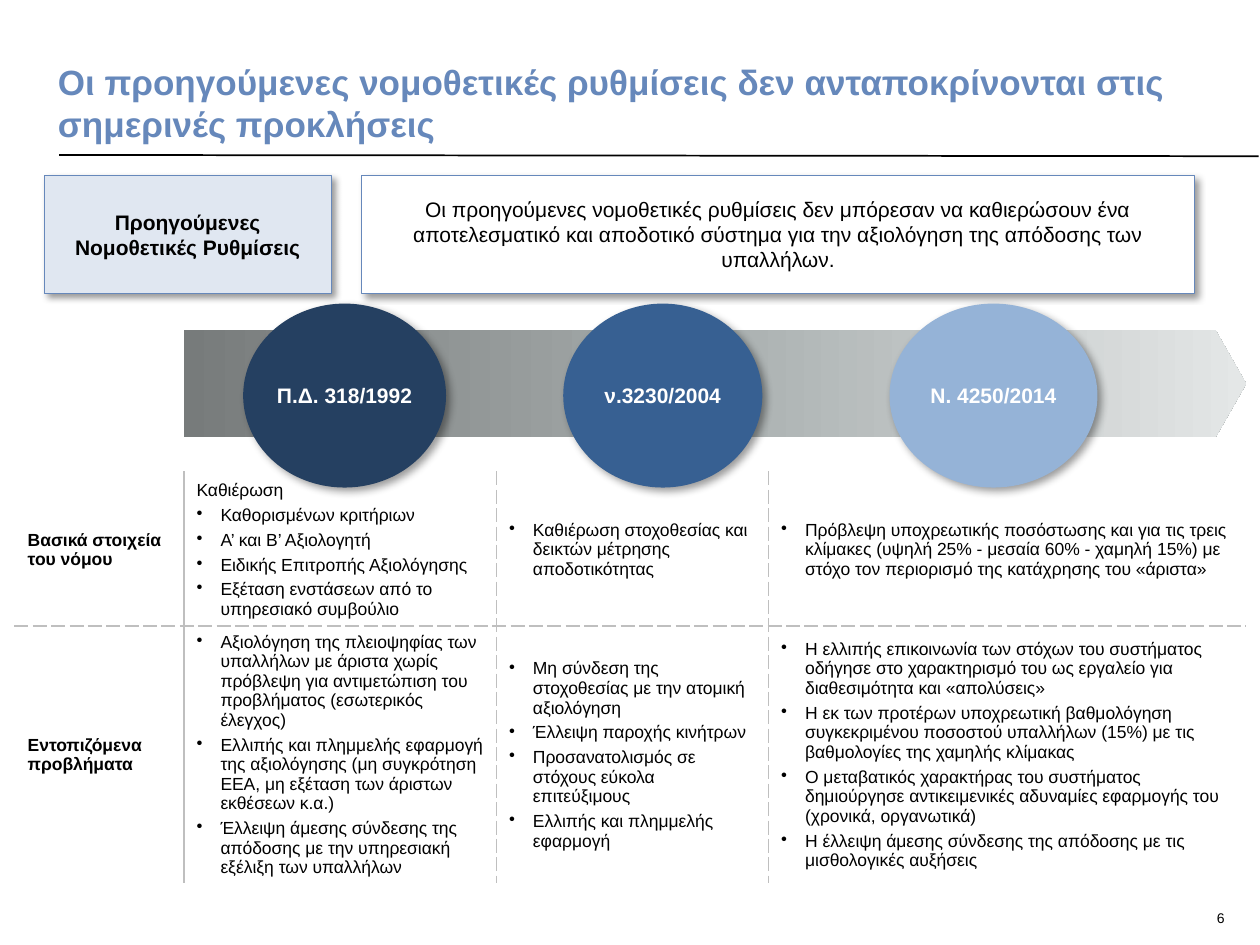
import pptx
import pptx.dml.color
import pptx.enum.shapes
import pptx.enum.text
import pptx.oxml
import pptx.oxml.ns
import pptx.util
from pptx.util import Inches

RGBColor = pptx.dml.color.RGBColor
SHAPE = pptx.enum.shapes.MSO_SHAPE
ALIGN = pptx.enum.text.PP_ALIGN
ANCHOR = pptx.enum.text.MSO_ANCHOR

BLACK = RGBColor(0x00, 0x00, 0x00)
WHITE = RGBColor(0xFF, 0xFF, 0xFF)
BLUE = RGBColor(0x66, 0x88, 0xBB)
PALE_BLUE = RGBColor(0xE0, 0xE7, 0xF1)
GREY = RGBColor(0xBF, 0xBF, 0xBF)
ARROW_GREYS = [(0, RGBColor(0x77, 0x7B, 0x7B)), (50, RGBColor(0xA9, 0xAF, 0xAF)),
               (100, RGBColor(0xE4, 0xE7, 0xE7))]

# Label, left, width and fill of each law on the timeline
LAWS = [
    ("Π.Δ. 318/1992", 1.93, 1.61, RGBColor(0x25, 0x40, 0x61)),
    ("ν.3230/2004", 4.47, 1.58, RGBColor(0x37, 0x60, 0x92)),
    ("Ν. 4250/2014", 7.06, 1.65, RGBColor(0x95, 0xB3, 0xD7)),
]
COL_WIDTHS = [1.34, 2.48, 2.16, 3.78]
ROW_HEIGHTS = [1.21, 2.04]
INTRO = "Καθιέρωση"
ROWS = [
    ("Βασικά στοιχεία του νόμου", [
        [INTRO, "Καθορισμένων κριτήριων", "Α’ και Β’ Αξιολογητή",
         "Ειδικής Επιτροπής Αξιολόγησης",
         "Εξέταση ενστάσεων από το υπηρεσιακό συμβούλιο"],
        ["Καθιέρωση στοχοθεσίας και δεικτών μέτρησης αποδοτικότητας"],
        ["Πρόβλεψη υποχρεωτικής ποσόστωσης και για τις τρεις κλίμακες (υψηλή 25% - "
         "μεσαία 60% - χαμηλή 15%) με στόχο τον περιορισμό της κατάχρησης του «άριστα»"],
    ]),
    ("Εντοπιζόμενα προβλήματα", [
        ["Αξιολόγηση της πλειοψηφίας των υπαλλήλων με άριστα χωρίς πρόβλεψη για "
         "αντιμετώπιση του προβλήματος (εσωτερικός έλεγχος)",
         "Ελλιπής και πλημμελής εφαρμογή της αξιολόγησης (μη συγκρότηση EEA, μη εξέταση "
         "των άριστων εκθέσεων κ.α.)",
         "Έλλειψη άμεσης σύνδεσης της απόδοσης με την υπηρεσιακή εξέλιξη των υπαλλήλων"],
        ["Μη σύνδεση της στοχοθεσίας με την ατομική αξιολόγηση",
         "Έλλειψη παροχής κινήτρων",
         "Προσανατολισμός σε στόχους εύκολα επιτεύξιμους",
         "Ελλιπής και πλημμελής εφαρμογή"],
        ["Η ελλιπής επικοινωνία των στόχων του συστήματος οδήγησε στο χαρακτηρισμό του "
         "ως εργαλείο για διαθεσιμότητα και «απολύσεις»",
         "Η εκ των προτέρων υποχρεωτική βαθμολόγηση συγκεκριμένου ποσοστού υπαλλήλων "
         "(15%) με τις βαθμολογίες της χαμηλής κλίμακας",
         "Ο μεταβατικός χαρακτήρας του συστήματος δημιούργησε αντικειμενικές αδυναμίες "
         "εφαρμογής του (χρονικά, οργανωτικά)",
         "H έλλειψη άμεσης σύνδεσης της απόδοσης με τις μισθολογικές αυξήσεις"],
    ]),
]


def xml(text):
    """Parse an element whose a: prefix is declared here."""
    tag, rest = text.split(" ", 1)
    return pptx.oxml.parse_xml(f"{tag} {pptx.oxml.ns.nsdecls('a')} {rest}")


def set_frame(tf, margins=(0, 0, 0, 0), anchor=ANCHOR.MIDDLE, wrap=True):
    left, top, right, bottom = map(Inches, margins)
    values = {"margin_left": left, "margin_top": top, "margin_right": right,
              "margin_bottom": bottom, "vertical_anchor": anchor, "word_wrap": wrap}
    for name, value in values.items():
        setattr(tf, name, value)


def write(p, text, size, color=BLACK, bold=False, align=ALIGN.LEFT, after=0):
    p.alignment = align
    p.space_before, p.space_after = pptx.util.Pt(0), pptx.util.Pt(after)
    r = p.add_run()
    r.text = text
    values = {"name": "Arial", "size": pptx.util.Pt(size), "bold": bold}
    for name, value in values.items():
        setattr(r.font, name, value)
    r.font.color.rgb = color


def add_shadow(sp, blur):
    pt = pptx.util.Pt
    sp.shadow.inherit = False
    sp._element.spPr.find(pptx.oxml.ns.qn("a:effectLst")).append(xml(
        f'<a:outerShdw blurRad="{pt(blur)}" dist="{pt(3)}" dir="2700000" algn="tl" '
        f'rotWithShape="0"><a:srgbClr val="{BLACK}"><a:alpha val="40000"/></a:srgbClr>'
        '</a:outerShdw>'))


def add_title(s, left, top, width, height):
    title = s.shapes.title
    title.left, title.top, title.width, title.height = map(
        Inches, (left, top, width, height))
    set_frame(title.text_frame, anchor=ANCHOR.BOTTOM)
    write(title.text_frame.paragraphs[0],
          "Οι προηγούμενες νομοθετικές ρυθμίσεις δεν ανταποκρίνονται στις "
          "σημερινές προκλήσεις", 20, BLUE, True)
    rule = s.shapes.add_connector(pptx.enum.shapes.MSO_CONNECTOR.STRAIGHT, Inches(0.47),
                                  Inches(1.23), Inches(9.99), Inches(1.24))
    rule.line.color.rgb = BLACK
    rule.line.width = pptx.util.Pt(1)
    rule._element.spPr.append(xml("<a:effectLst />"))


def add_panel(s, left, top, width, height, text, fill, bold):
    sp = s.shapes.add_shape(SHAPE.RECTANGLE, *map(Inches, (left, top, width, height)))
    sp.fill.solid()
    sp.fill.fore_color.rgb = fill
    sp.line.color.rgb = BLUE
    sp.line.width = pptx.util.Pt(0.5)
    add_shadow(sp, 4)
    set_frame(sp.text_frame, (0.08,) * 4)
    write(sp.text_frame.paragraphs[0], text, 12, bold=bold, align=ALIGN.CENTER)


def add_timeline(s, left, top, width, height):
    """An arrow with one ellipse per law, standing out above and below it."""
    group = s.shapes.add_group_shape()
    arrow = group.shapes.add_shape(SHAPE.PENTAGON,
                                   *map(Inches, (left, top, width, height)))
    arrow.adjustments[0] = 0.285
    arrow.shadow.inherit = False
    arrow.line.fill.background()
    arrow.fill.gradient()
    arrow.fill.gradient_angle = 0
    stops = arrow._element.spPr.find(".//" + pptx.oxml.ns.qn("a:gsLst"))
    for stop in list(stops):
        stops.remove(stop)
    for pos, color in ARROW_GREYS:
        stops.append(xml(f'<a:gs pos="{pos * 1000}"><a:srgbClr val="{color}"/></a:gs>'))
    for label, x, diameter, fill in LAWS:
        sp = group.shapes.add_shape(SHAPE.OVAL, Inches(x), Inches(top - 0.21),
                                    Inches(diameter), Inches(height + 0.61))
        sp.fill.solid()
        sp.fill.fore_color.rgb = fill
        sp.line.fill.background()
        add_shadow(sp, 5)
        set_frame(sp.text_frame, wrap=False)
        write(sp.text_frame.paragraphs[0], label, 12, WHITE, True, ALIGN.CENTER)


def set_borders(cell, row, col):
    """Grey lines between cells, dashed except beside the labels; white outside."""
    last_row, last_col = len(ROW_HEIGHTS) - 1, len(COL_WIDTHS) - 1
    outer = (WHITE, 1, "solid")
    across = (GREY, 1, "dash")

    def upright(edge):
        return (GREY, 1, "solid" if edge == 1 else "sysDash")

    borders = {
        "lnL": upright(col) if col else outer,
        "lnR": upright(col + 1) if col < last_col else outer,
        "lnT": across if row else (WHITE, 3, "solid"),
        "lnB": across if row < last_row else outer,
    }
    tc_pr = cell._tc.get_or_add_tcPr()
    for i, (tag, (color, width, dash)) in enumerate(borders.items()):
        tc_pr.insert(i, xml(
            f'<a:{tag} w="{pptx.util.Pt(width)}"><a:solidFill><a:srgbClr val="{color}"/>'
            f'</a:solidFill><a:prstDash val="{dash}"/></a:{tag}>'))


def write_list(tf, items):
    for i, item in enumerate(items):
        p = tf.add_paragraph() if i else tf.paragraphs[0]
        p_pr = p._p.get_or_add_pPr()
        p_pr.set("marL", str(Inches(0.19)))
        p_pr.set("indent", str(Inches(-0.19)))
        p_pr.append(xml("<a:buNone />" if item == INTRO else '<a:buChar char="•"/>'))
        write(p, item, 10, after=3)


def add_comparison(s, left, top):
    table = s.shapes.add_table(len(ROW_HEIGHTS), len(COL_WIDTHS), Inches(left), Inches(top),
                               Inches(sum(COL_WIDTHS)), Inches(sum(ROW_HEIGHTS))).table
    table.first_row = table.horz_banding = False
    for column, width in zip(table.columns, COL_WIDTHS):
        column.width = Inches(width)
    for i, (label, lists) in enumerate(ROWS):
        table.rows[i].height = Inches(ROW_HEIGHTS[i])
        for j in range(len(COL_WIDTHS)):
            cell = table.cell(i, j)
            cell.vertical_anchor = ANCHOR.MIDDLE
            if j:
                cell.fill.background()
                write_list(cell.text_frame, lists[j - 1])
            else:
                cell.fill.solid()
                cell.fill.fore_color.rgb = WHITE
                write(cell.text_frame.paragraphs[0], label, 10, bold=True, after=3)
            set_borders(cell, i, j)


def add_page_number(s, left, top, width, height):
    tf = s.shapes.add_textbox(*map(Inches, (left, top, width, height))).text_frame
    set_frame(tf, (0, 0.04, 0, 0), ANCHOR.TOP)
    write(tf.paragraphs[0], "6", 8, align=ALIGN.RIGHT)


def main():
    prs = pptx.Presentation()
    prs.slide_width, prs.slide_height = Inches(10), Inches(7.5)
    s = prs.slides.add_slide(prs.slide_layouts[5])
    add_title(s, 0.46, 0.2, 9.42, 0.95)
    add_panel(s, 0.35, 1.39, 2.28, 0.94, "Προηγούμενες Νομοθετικές Ρυθμίσεις",
              PALE_BLUE, True)
    add_panel(s, 2.87, 1.39, 6.61, 0.94,
              "Οι προηγούμενες νομοθετικές ρυθμίσεις δεν μπόρεσαν να καθιερώσουν ένα "
              "αποτελεσματικό και αποδοτικό σύστημα για την αξιολόγηση της απόδοσης των "
              "υπαλλήλων.", WHITE, False)
    add_comparison(s, 0.12, 3.76)
    add_timeline(s, 1.46, 2.62, 8.43, 0.85)
    add_page_number(s, 9.29, 7.18, 0.43, 0.25)
    prs.save("out.pptx")


if __name__ == "__main__":
    main()
